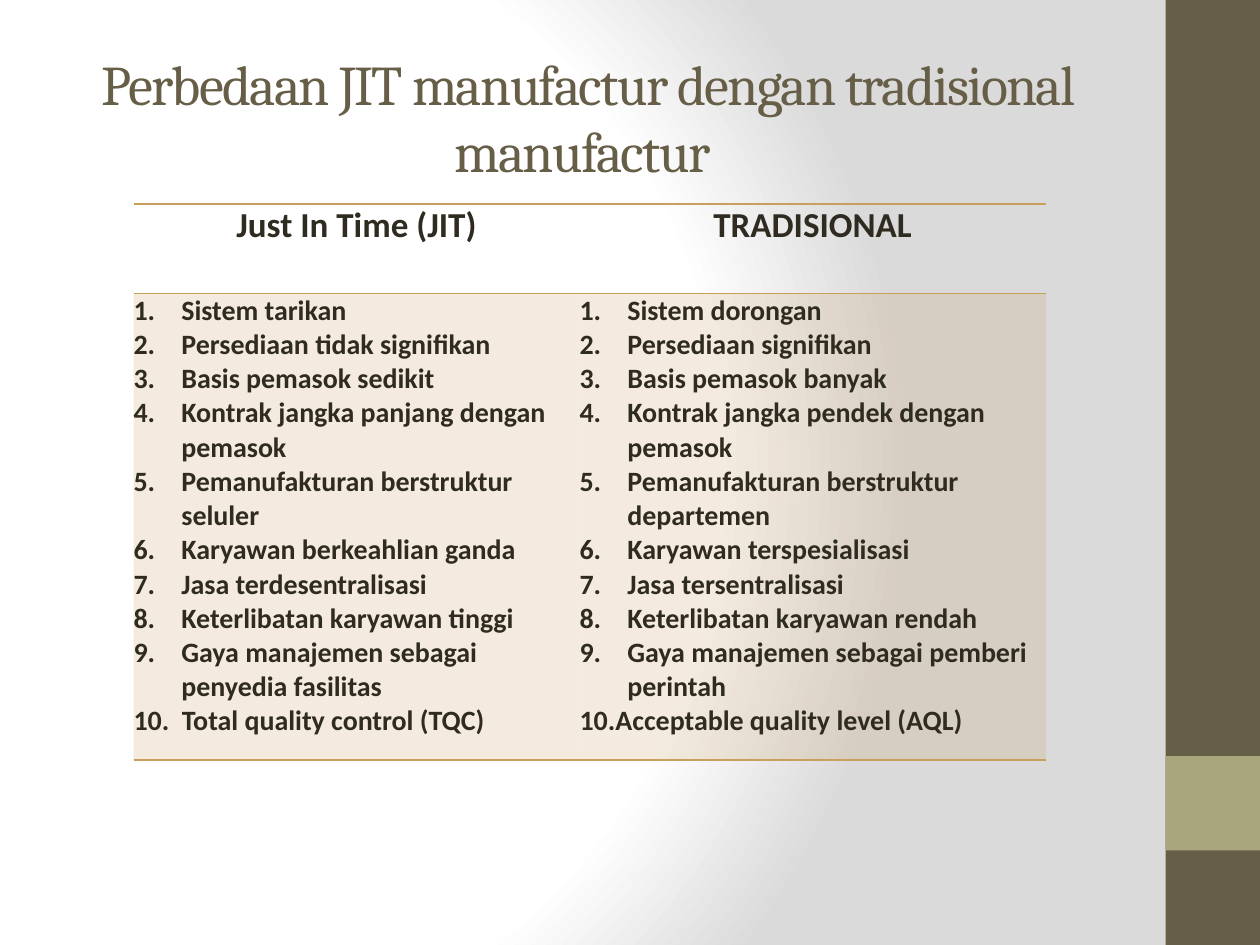
from dataclasses import dataclass

from lxml import etree
from pptx import Presentation
from pptx.dml.color import RGBColor
from pptx.enum.shapes import MSO_SHAPE
from pptx.enum.text import MSO_ANCHOR, PP_ALIGN
from pptx.oxml import parse_xml
from pptx.oxml.ns import nsdecls, qn
from pptx.util import Inches, Pt


@dataclass(frozen=True)
class Theme:
    brown: str = "675E47"
    olive: str = "A9A57C"
    gold: str = "C89F5D"
    ink: str = "2F2B20"
    white: str = "FFFFFF"
    grey: str = "DADADA"
    title_font: str = "Cambria"
    body_font: str = "Calibri"
    title_size: int = 32
    heading_size: int = 20
    body_size: int = 16


theme = Theme()


def add_run(paragraph, text, font_name, size, color, bold=False):
    run = paragraph.add_run()
    run.text = text
    run.font.name = font_name
    run.font.size = Pt(size)
    run.font.bold = bold
    run.font.color.rgb = RGBColor.from_string(color)
    return run


def style_cell(cell, edges):
    """Clear the margins and rule the named edges in gold."""
    cell.margin_left = cell.margin_right = cell.margin_top = cell.margin_bottom = 0
    properties = cell._tc.get_or_add_tcPr()
    for position, edge in enumerate(edges):
        properties.insert(position, parse_xml(
            f'<a:{edge} {nsdecls("a")} w="{Pt(1)}"><a:solidFill>'
            f'<a:srgbClr val="{theme.gold}"/></a:solidFill></a:{edge}>'))


presentation = Presentation()
presentation.slide_width = Inches(10)
presentation.slide_height = Inches(7.5)
slide = presentation.slides.add_slide(presentation.slide_layouts[6])

# Background: white circle of light fading to grey
background_fill = slide.background.fill
background_fill.gradient()
gradient = background_fill._fill._gradFill
for child in list(gradient):
    gradient.remove(child)
stops = etree.SubElement(gradient, qn("a:gsLst"))
for percent, color in ((0, theme.white), (75, theme.white), (100, theme.grey)):
    stop = etree.SubElement(stops, qn("a:gs"), pos=str(percent * 1000))
    etree.SubElement(stop, qn("a:srgbClr"), val=color)
circle = etree.SubElement(gradient, qn("a:path"), attrib={"path": "circle"})
etree.SubElement(circle, qn("a:fillToRect"), l="20000", t="50000", r="100000", b="50000")

# Side band with its accent square
for top, height, color in ((0, 7.5, theme.brown), (6, 0.75, theme.olive)):
    band = slide.shapes.add_shape(
        MSO_SHAPE.RECTANGLE, Inches(9.25), Inches(top), Inches(0.75), Inches(height))
    band.shadow.inherit = False
    band.fill.solid()
    band.fill.fore_color.rgb = RGBColor.from_string(color)
    band.line.fill.background()

# Title
title = slide.shapes.add_textbox(Inches(0.5), Inches(0.3), Inches(8.33), Inches(1.25))
title.text_frame.word_wrap = True
title.text_frame.vertical_anchor = MSO_ANCHOR.MIDDLE
paragraph = title.text_frame.paragraphs[0]
paragraph.alignment = PP_ALIGN.CENTER
run = add_run(paragraph, "Perbedaan JIT manufactur dengan tradisional manufactur ",
              theme.title_font, theme.title_size, theme.brown)
run.font._element.set("spc", "-100")

# Comparison table: heading, numbered items, closing item with a typed number
columns = (
    (3.54, "Just In Time (JIT)", (
        "Sistem tarikan",
        "Persediaan tidak signifikan",
        "Basis pemasok sedikit",
        "Kontrak jangka panjang dengan pemasok",
        "Pemanufakturan berstruktur seluler",
        "Karyawan berkeahlian ganda",
        "Jasa terdesentralisasi",
        "Keterlibatan karyawan tinggi",
        "Gaya manajemen sebagai penyedia fasilitas",
    ), "10.  Total quality control (TQC)"),
    (3.7, "TRADISIONAL", (
        "Sistem dorongan",
        "Persediaan signifikan",
        "Basis pemasok banyak",
        "Kontrak jangka pendek dengan pemasok",
        "Pemanufakturan berstruktur departemen",
        "Karyawan terspesialisasi",
        "Jasa tersentralisasi",
        "Keterlibatan karyawan rendah",
        "Gaya manajemen sebagai pemberi perintah",
    ), "10.Acceptable quality level (AQL)"),
)
table = slide.shapes.add_table(
    2, len(columns), Inches(1.06), Inches(1.62), Inches(7.24), Inches(4.41)).table
table.first_row = False
table.horz_banding = False
no_style_no_grid = "{2D5ABB26-0587-4C30-8999-92F81FD0307C}"
table._tbl.tblPr.find(qn("a:tableStyleId")).text = no_style_no_grid
for row, height in zip(table.rows, (0.71, 3.7)):
    row.height = Inches(height)

for index, (width, heading, items, closing) in enumerate(columns):
    table.columns[index].width = Inches(width)

    heading_cell = table.cell(0, index)
    style_cell(heading_cell, ("lnT", "lnB"))
    heading_cell.fill.background()
    paragraph = heading_cell.text_frame.paragraphs[0]
    paragraph.alignment = PP_ALIGN.CENTER
    add_run(paragraph, heading, theme.body_font, theme.heading_size, theme.ink, bold=True)

    list_cell = table.cell(1, index)
    style_cell(list_cell, ("lnT", "lnB"))
    list_cell.fill.solid()
    list_cell.fill.fore_color.rgb = RGBColor.from_string(theme.gold)
    tint = list_cell._tc.tcPr.find(qn("a:solidFill")).find(qn("a:srgbClr"))
    etree.SubElement(tint, qn("a:alpha"), val="20000")

    text_frame = list_cell.text_frame
    for number, text in enumerate((*items, closing)):
        paragraph = text_frame.add_paragraph() if number else text_frame.paragraphs[0]
        add_run(paragraph, text, theme.body_font, theme.body_size, theme.ink, bold=True)
        if number < len(items):
            properties = paragraph._p.get_or_add_pPr()
            properties.set("marL", str(Inches(0.38)))
            properties.set("indent", str(-Inches(0.38)))
            etree.SubElement(properties, qn("a:buAutoNum"), type="arabicPeriod")
            tabs = etree.SubElement(properties, qn("a:tabLst"))
            etree.SubElement(tabs, qn("a:tab"), pos=str(Inches(0.5)), algn="l")

presentation.save("out.pptx")
